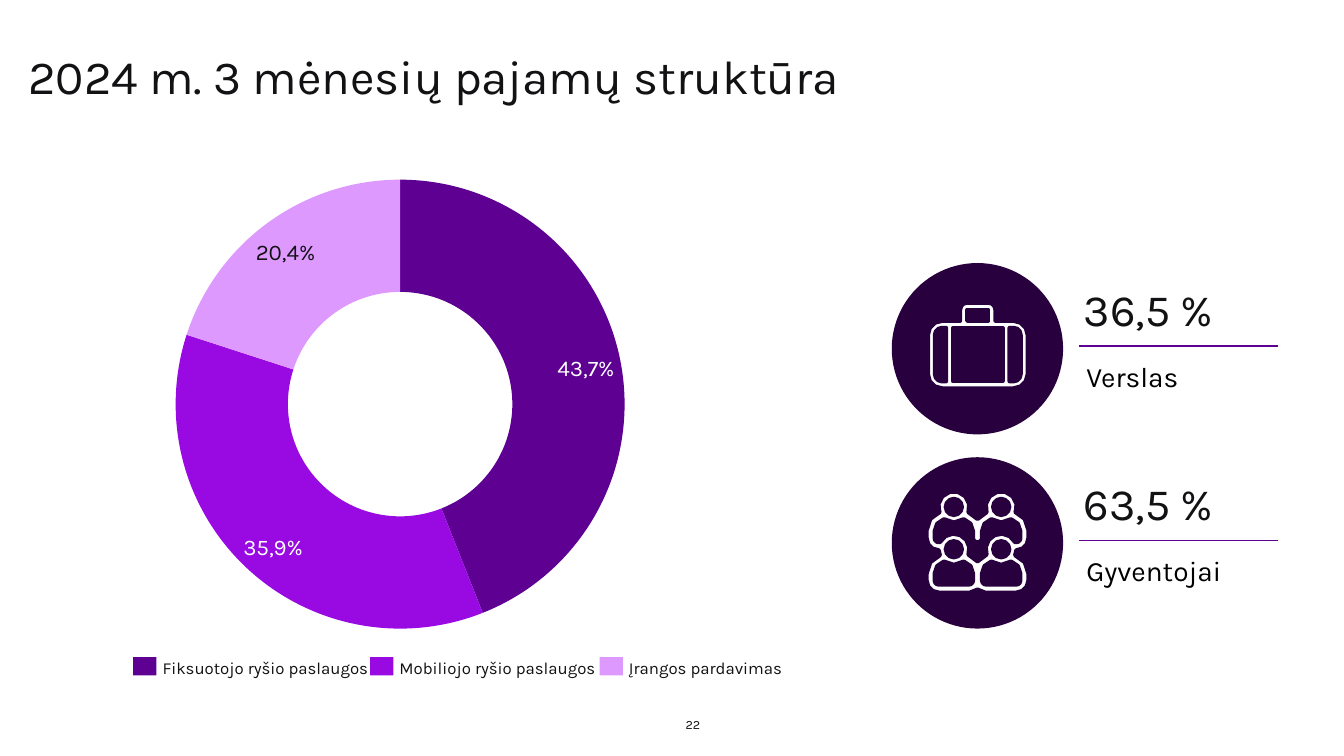
import math
import pptx
import pptx.chart.data
import pptx.dml.color
import pptx.enum.chart
import pptx.enum.shapes
import pptx.enum.text
import pptx.util
from lxml import etree
from pptx.oxml.ns import qn

Pt = pptx.util.Pt
RGB = pptx.dml.color.RGBColor
SHAPE = pptx.enum.shapes.MSO_SHAPE
ANCHOR = pptx.enum.text.MSO_ANCHOR
ALIGN = pptx.enum.text.PP_ALIGN

INK = RGB(0x12, 0x12, 0x14)
BLACK = RGB(0, 0, 0)
WHITE = RGB(0xFF, 0xFF, 0xFF)
NIGHT = RGB(0x29, 0x00, 0x3E)
PURPLE = RGB(0x5E, 0x00, 0x92)
VIOLET = RGB(0x99, 0x0A, 0xE3)
LILAC = RGB(0xDE, 0x99, 0xFF)
FONT = "Karla"
ICON_UNIT = 0.72

REVENUE = [
    ("Fiksuotojo ryšio paslaugos", 44, "43,7%", PURPLE),
    ("Mobiliojo ryšio paslaugos", 36, "35,9%", VIOLET),
    ("Įrangos pardavimas", 20, "20,4%", LILAC),
]


def add_text(slide, box, text, size, color=INK, anchor=ANCHOR.TOP, inset=(0, 0),
             wrap=True, align=ALIGN.LEFT, spacing=None):
    frame = slide.shapes.add_textbox(*map(Pt, box)).text_frame
    frame.word_wrap = wrap
    frame.vertical_anchor = anchor
    frame.margin_left = frame.margin_right = Pt(inset[0])
    frame.margin_top = frame.margin_bottom = Pt(inset[1])
    frame.text = text
    paragraph = frame.paragraphs[0]
    paragraph.alignment = align
    paragraph.line_spacing = spacing
    font = paragraph.runs[0].font
    font.name, font.size, font.color.rgb = FONT, Pt(size), color


def add_filled(slide, preset, box, color):
    shape = slide.shapes.add_shape(preset, *map(Pt, box))
    shape.shadow.inherit = False
    shape.fill.solid()
    shape.fill.fore_color.rgb = color
    shape.line.fill.background()


def arc(x, y, radius, start, end):
    steps = max(2, round(abs(end - start) / 30))
    angles = [math.radians(start + (end - start) * i / steps) for i in range(steps + 1)]
    return [(x + radius * math.cos(a), y + radius * math.sin(a)) for a in angles]


def rectangle(left, top, right, bottom):
    return [(left, top), (right, top), (right, bottom), (left, bottom)]


def mirrored(points, axis):
    return [(2 * axis - x, y) for x, y in reversed(points)]


def suitcase_contours():
    axis = 49.5
    handle = arc(60, 7, 7, -90, 0) + [(67, 18)]
    right_half = handle + arc(85, 32, 14, -90, 0) + arc(85, 71, 14, 0, 90)
    pane = [(81, 25)] + arc(85, 32, 7, -90, 0) + arc(85, 71, 7, 0, 90) + [(81, 78)]
    return [right_half + mirrored(right_half, axis), rectangle(25, 25, 74, 78),
            rectangle(39, 7, 60, 18), pane, mirrored(pane, axis)]


def people_contours():
    axis, head_x, top_y, low_y = 50.5, 74, 16, 58
    silhouette = ([(axis, 28)] + arc(head_x, top_y, 15.5, 160, 380)
                  + arc(82, 39, 19, -72, 0) + arc(89, 47, 12, 0, 90)
                  + arc(82, 82, 19, -72, 0) + arc(89, 89, 12, 0, 90)
                  + [(58, 101), (axis, 98)])
    upper_bodies = ([(axis, 70)] + arc(head_x, low_y, 15.5, 160, 332)
                    + arc(89, 47, 4, 90, 0) + arc(81, 40, 12, 360, 285)
                    + arc(head_x, top_y, 15.5, 53, 127) + arc(67, 40, 12, 255, 180)
                    + arc(51, 47, 4, 0, 90))
    lower_body = (arc(67, 82, 12, 180, 255) + arc(head_x, low_y, 15.5, 127, 53)
                  + arc(81, 82, 12, 285, 360) + arc(89, 89, 4, 0, 90)
                  + arc(59, 89, 4, 90, 180))
    contours = [half + mirrored(half, axis) for half in (silhouette, upper_bodies)]
    for part in (lower_body, arc(head_x, top_y, 8, 0, 360), arc(head_x, low_y, 8, 0, 360)):
        contours += [part, mirrored(part, axis)]
    return contours


def add_icon(slide, left, top, contours):
    placed = [[(Pt(left + x * ICON_UNIT), Pt(top + y * ICON_UNIT)) for x, y in contour]
              for contour in contours]
    builder = slide.shapes.build_freeform(*placed[0][0], scale=1.0)
    builder.add_line_segments(placed[0][1:], close=True)
    for contour in placed[1:]:
        builder.move_to(*contour[0])
        builder.add_line_segments(contour[1:], close=True)
    icon = builder.convert_to_shape()
    icon.shadow.inherit = False
    icon.fill.solid()
    icon.fill.fore_color.rgb = WHITE
    icon.line.color.rgb = NIGHT
    icon.line.width = Pt(3)


def add_customer_group(slide, left, top, share, group, contours, icon_offset):
    add_filled(slide, SHAPE.OVAL, (left, top, 122.4, 122.4), NIGHT)
    add_icon(slide, left + icon_offset[0], top + icon_offset[1], contours)
    add_text(slide, (left + 134.1, top + 35.7, 140.4, 18.7), share, 32,
             anchor=ANCHOR.BOTTOM, inset=(2.88, 2.88))
    add_text(slide, (left + 133.2, top + 66.2, 141.1, 35.3), group, 20, BLACK, inset=(5.76, 2.88))
    rule = slide.shapes.add_connector(
        pptx.enum.shapes.MSO_CONNECTOR.STRAIGHT,
        Pt(left + 133.9), Pt(top + 59.3), Pt(left + 275.8), Pt(top + 59.3))
    rule.line.color.rgb = PURPLE
    rule.line.width = Pt(1)
    etree.SubElement(rule._element.spPr, qn("a:effectLst"))


def add_revenue_chart(slide, left, top, side):
    revenue = pptx.chart.data.CategoryChartData()
    revenue.categories = ["1", "2", "3"]
    revenue.add_series("Series 1", [value for _, value, _, _ in REVENUE])
    chart = slide.shapes.add_chart(pptx.enum.chart.XL_CHART_TYPE.DOUGHNUT,
                                   *map(Pt, (left, top, side, side)), revenue).chart
    chart.has_legend = False
    chart.has_title = False
    chart.font.name, chart.font.size = FONT, Pt(10)
    chart.font.color.rgb = INK
    ring = chart.plots[0]
    ring.has_data_labels = False
    ring._element.find(qn("c:holeSize")).set("val", "59")
    for index, (_, _, _, color) in enumerate(REVENUE):
        segment = ring.series[0].points[index].format
        segment.fill.solid()
        segment.fill.fore_color.rgb = color
        segment.line.fill.background()
    plot_area = chart._chartSpace.chart.plotArea
    for previous in plot_area.findall(qn("c:layout")):
        plot_area.remove(previous)
    layout = etree.Element(qn("c:layout"))
    plot_area.insert(0, layout)
    manual = etree.SubElement(layout, qn("c:manualLayout"))
    for tag, value in (("layoutTarget", "inner"), ("xMode", "edge"), ("yMode", "edge"),
                       ("x", "0.02"), ("y", "0.02"), ("w", "0.96"), ("h", "0.96")):
        etree.SubElement(manual, qn("c:" + tag)).set("val", value)

    label_places = [(274.6, 130.3, WHITE), (51.1, 257.8, WHITE), (60, 47.2, INK)]
    for (_, _, share, _), (x, y, color) in zip(REVENUE, label_places):
        add_text(slide, (left + x, top + y, 50.4, 20.2), share, 16,
                 color, ANCHOR.MIDDLE, (2.16, 0), False, ALIGN.CENTER, 1.06)


def add_legend(slide, left, top):
    for (service, _, _, color), x, width in zip(REVENUE, (0, 169.2, 333.2), (152, 146, 116)):
        add_filled(slide, SHAPE.RECTANGLE, (left + x, top, 16.6, 13), color)
        add_text(slide, (left + x + 20.9, top - 0.7, width, 15.1), service, 12,
                 anchor=ANCHOR.MIDDLE, wrap=False, spacing=1.06)


def main():
    deck = pptx.Presentation()
    deck.slide_width, deck.slide_height = Pt(960), Pt(540)
    slide = deck.slides.add_slide(deck.slide_layouts[6])
    add_text(slide, (20.2, 39.6, 919.4, 72.7), "2024 m. 3 mėnesių pajamų struktūra", 34, spacing=0.86)
    add_text(slide, (489.8, 505.4, 58.3, 17.3), "22", 9, anchor=ANCHOR.BOTTOM)
    add_customer_group(slide, 637, 187.9, "36,5 %", "Verslas", suitcase_contours(), (25.8, 28.3))
    add_customer_group(slide, 637, 326.6, "63,5 %", "Gyventojai", people_contours(), (24.9, 24))
    add_revenue_chart(slide, 118.8, 121.7, 334.1)
    add_legend(slide, 95.2, 469.4)
    deck.save("out.pptx")


if __name__ == "__main__":
    main()
